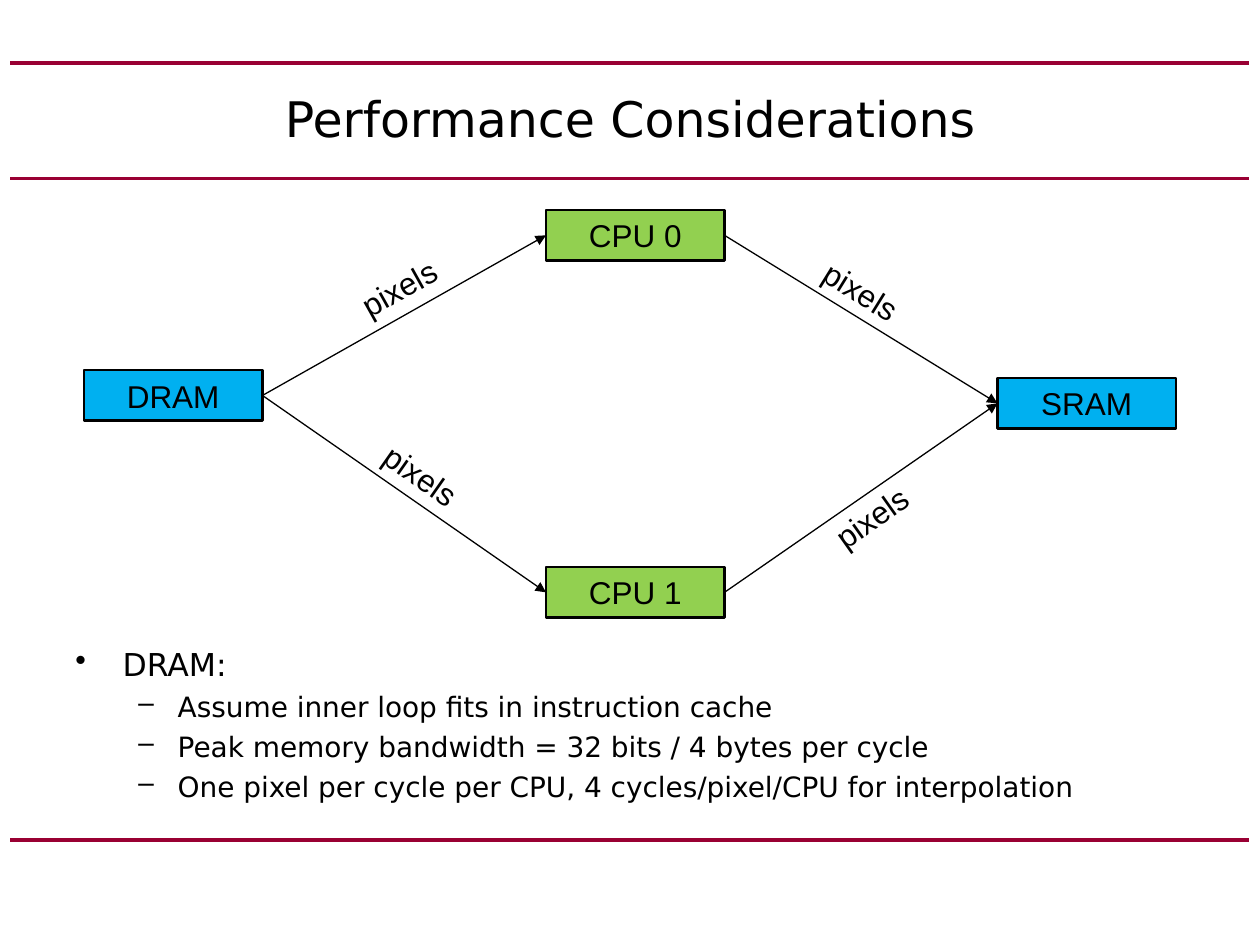
from lxml.etree import SubElement
from pptx import Presentation
from pptx.dml.color import RGBColor
from pptx.enum.shapes import MSO_CONNECTOR as Connector, MSO_SHAPE as Preset
from pptx.enum.text import MSO_ANCHOR as Anchor, PP_ALIGN as Align
from pptx.oxml.ns import qn
from pptx.util import Pt


def color(value):
    return RGBColor.from_string(value)


def style(paragraph, size, name, alignment):
    paragraph.alignment = alignment
    paragraph.font.size = Pt(size)
    paragraph.font.name = name
    paragraph.font.color.rgb = color("000000")


presentation = Presentation()
presentation.slide_width, presentation.slide_height = Pt(720), Pt(540)
slide = presentation.slides.add_slide(presentation.slide_layouts[6])
shapes = slide.shapes

for y in (480, 102, 36):
    rule = shapes.add_connector(Connector.STRAIGHT, Pt(6), Pt(y), Pt(714), Pt(y))
    rule.line.color.rgb = color("990033")
    rule.line.width = Pt(2.25)
    SubElement(rule._element.spPr, qn("a:effectLst"))

title = shapes.add_textbox(Pt(36), Pt(36), Pt(648), Pt(63))
title.text_frame.word_wrap = True
title.text_frame.vertical_anchor = Anchor.MIDDLE
title.text_frame.text = "Performance Considerations"
style(title.text_frame.paragraphs[0], 28, "DejaVu Sans", Align.CENTER)

boxes = {}
for label, left, top, fill in (
    ("CPU 0", 312, 120, "92D050"),
    ("CPU 1", 312, 324, "92D050"),
    ("DRAM", 48, 211.5, "00B0F0"),
    ("SRAM", 570, 216, "00B0F0"),
):
    box = shapes.add_shape(Preset.RECTANGLE, Pt(left), Pt(top), Pt(102), Pt(29))
    box.shadow.inherit = False
    box.fill.solid()
    box.fill.fore_color.rgb = color(fill)
    box.line.color.rgb = color("000000")
    box.line.width = Pt(1.5)
    box.text_frame.word_wrap = True
    box.text_frame.text = label
    style(box.text_frame.paragraphs[0], 18, "Arial", Align.CENTER)
    boxes[label] = box

LEFT_SITE, RIGHT_SITE = 1, 3
for source, target, left, top, rotation in (
    ("DRAM", "CPU 0", 138, 150, 330.8),
    ("DRAM", "CPU 1", 150.5, 257, 35.1),
    ("CPU 0", "SRAM", 402, 152, 31.8),
    ("CPU 1", "SRAM", 408, 281, 324.7),
):
    arrow = shapes.add_connector(Connector.STRAIGHT, Pt(0), Pt(0), Pt(0), Pt(0))
    arrow.begin_connect(boxes[source], RIGHT_SITE)
    arrow.end_connect(boxes[target], LEFT_SITE)
    arrow.line.color.rgb = color("000000")
    arrow.line.width = Pt(0.75)
    SubElement(arrow.line._get_or_add_ln(), qn("a:tailEnd"), type="triangle")
    SubElement(arrow._element.spPr, qn("a:effectLst"))

    caption = shapes.add_textbox(Pt(left), Pt(top), Pt(180), Pt(29))
    caption.rotation = rotation
    caption.text_frame.word_wrap = True
    caption.text_frame.text = "pixels"
    style(caption.text_frame.paragraphs[0], 18, "Arial", Align.CENTER)

body = shapes.add_textbox(Pt(36), Pt(365), Pt(648), Pt(109.5))
body.text_frame.word_wrap = True
body.text_frame.text = "\n".join((
    "DRAM:",
    "Assume inner loop fits in instruction cache",
    "Peak memory bandwidth = 32 bits / 4 bytes per cycle",
    "One pixel per cycle per CPU, 4 cycles/pixel/CPU for interpolation",
))
for index, paragraph in enumerate(body.text_frame.paragraphs):
    level, bullet, size, margin, indent, space = (
        (1, "–", 16, 58.5, -22.5, 3.7) if index else (0, "•", 18, 27, -27, 0)
    )
    paragraph.level = level
    paragraph.space_before = Pt(space)
    properties = paragraph._p.get_or_add_pPr()
    properties.set("marL", str(Pt(margin)))
    properties.set("indent", str(Pt(indent)))
    SubElement(properties, qn("a:buChar"), char=bullet)
    style(paragraph, size, "DejaVu Sans", Align.LEFT)

presentation.save("out.pptx")
